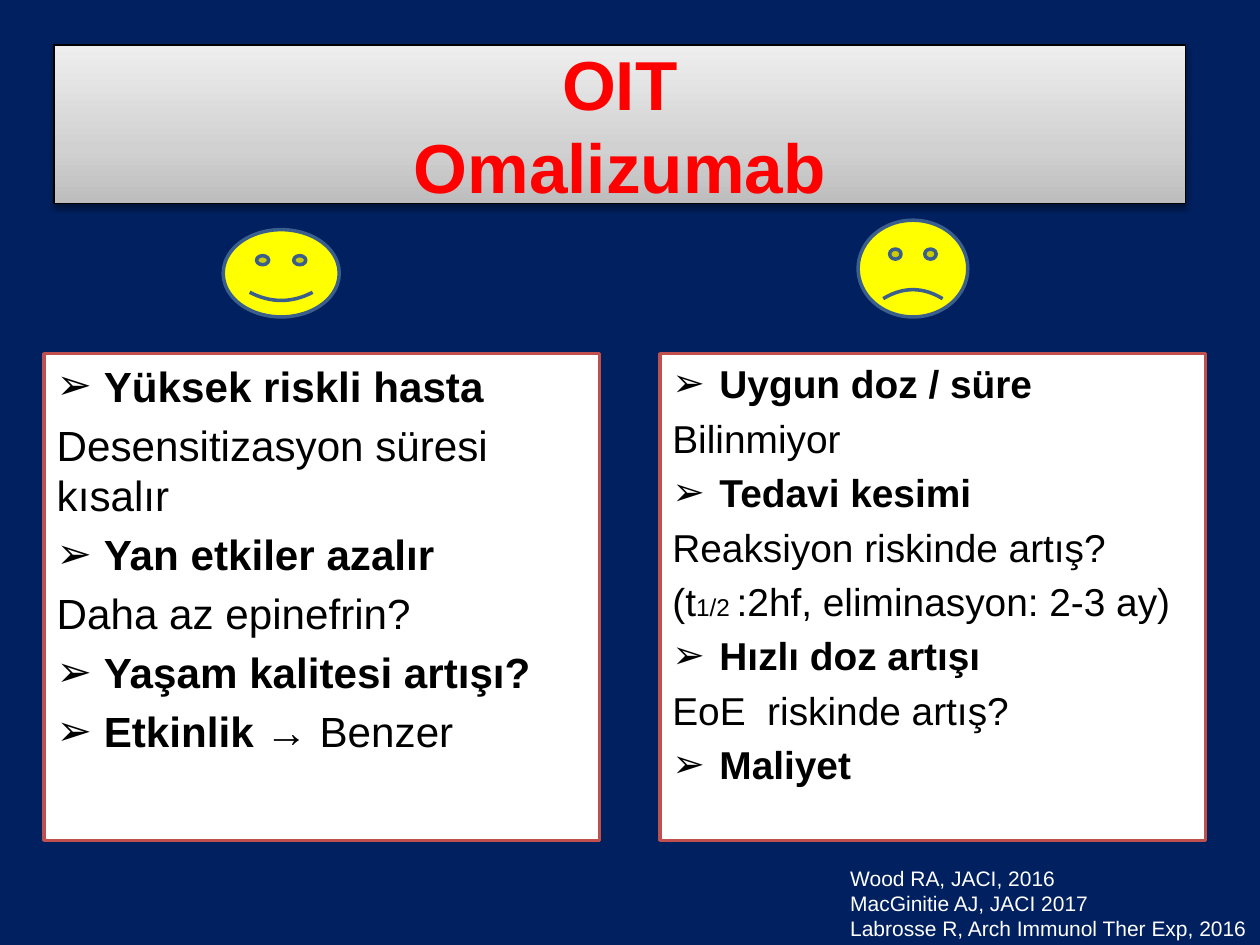
from copy import deepcopy

from pptx import Presentation
from pptx.dml.color import RGBColor
from pptx.enum.shapes import MSO_SHAPE
from pptx.enum.text import MSO_ANCHOR, MSO_AUTO_SIZE, PP_ALIGN
from pptx.oxml import parse_xml
from pptx.oxml.ns import nsdecls, qn
from pptx.util import Cm, Pt

COLORS = {
    "navy": "002060", "white": "FFFFFF", "black": "000000",
    "red": "FF0000", "border": "C0504D", "yellow": "FFFF00",
    "face_line": "3A5F8C",
}
TITLE_STOPS = [(0, "BDBDBD"), (0.35, "D1D1D1"), (1, "EEEEEE")]
INDENT = Cm(0.95)

# Each paragraph: (has bullet, [(text, bold, small), ...])
BENEFITS = [
    (True, [("Yüksek riskli hasta", True, False)]),
    (False, [("Desensitizasyon süresi kısalır", False, False)]),
    (True, [("Yan etkiler azalır", True, False)]),
    (False, [("Daha az epinefrin?", False, False)]),
    (True, [("Yaşam kalitesi artışı?", True, False)]),
    (True, [("Etkinlik → ", True, False), ("Benzer", False, False)]),
]
CONCERNS = [
    (True, [("Uygun doz / süre", True, False)]),
    (False, [("Bilinmiyor", False, False)]),
    (True, [("Tedavi kesimi", True, False)]),
    (False, [("Reaksiyon riskinde artış?", False, False)]),
    (False, [("(t", False, False), ("1/2 ", False, True),
             (":2hf, eliminasyon: 2-3 ay)", False, False)]),
    (True, [("Hızlı doz artışı", True, False)]),
    (False, [("EoE  riskinde artış?", False, False)]),
    (True, [("Maliyet", True, False)]),
]
REFERENCES = [
    "Wood RA, JACI, 2016",
    "MacGinitie AJ, JACI 2017",
    "Labrosse R, Arch Immunol Ther Exp, 2016",
]


def rgb(name):
    return RGBColor.from_string(COLORS[name])


def place(sp, left, top, width, height):
    box = {"left": left, "top": top, "width": width, "height": height}
    for name, value in box.items():
        setattr(sp, name, Cm(value))


def outline(sp, color, width):
    sp.line.color.rgb = rgb(color)
    sp.line.width = Pt(width)


def add_run(p, text, size, color, bold=False):
    r = p.add_run()
    r.text = text
    font = {"name": "Arial", "size": Pt(size), "bold": bold}
    for name, value in font.items():
        setattr(r.font, name, value)
    r.font.color.rgb = rgb(color)


def fill_title(sp):
    place(sp, 1.09, 0.91, 22.81, 3.2)

    # Three-stop grey gradient, light at the top
    sp.fill.gradient()
    sp.fill.gradient_angle = 90
    gs_list = sp.element.spPr.find(qn("a:gradFill")).find(qn("a:gsLst"))
    gs_list.append(deepcopy(gs_list[0]))
    for stop, (position, color) in zip(sp.fill.gradient_stops, TITLE_STOPS):
        stop.position = position
        stop.color.rgb = RGBColor.from_string(color)
    outline(sp, "black", 0.75)

    # Soft shadow below
    sp.shadow.inherit = False
    sp.element.spPr.find(qn("a:effectLst")).append(parse_xml(
        f'<a:outerShdw {nsdecls("a")} blurRad="40000" dist="20000" '
        'dir="5400000" rotWithShape="0"><a:srgbClr val="000000">'
        '<a:alpha val="38000"/></a:srgbClr></a:outerShdw>'))

    tf = sp.text_frame
    tf.auto_size = MSO_AUTO_SIZE.NONE
    tf.vertical_anchor = MSO_ANCHOR.MIDDLE
    p = tf.paragraphs[0]
    p.alignment = PP_ALIGN.CENTER
    add_run(p, "OIT", 39.6, "red", True)
    p.add_line_break()
    add_run(p, "Omalizumab", 39.6, "red", True)


def set_bullet(p, bulleted):
    pPr = p._p.get_or_add_pPr()
    pPr.set("marL", str(INDENT if bulleted else 0))
    pPr.set("indent", str(-INDENT if bulleted else 0))
    tag = 'buChar {} char="➢"' if bulleted else "buNone {}"
    pPr.append(parse_xml(f'<a:{tag.format(nsdecls("a"))}/>'))


def fill_list(sp, left, width, size, items):
    place(sp, left, 7.13, width, 9.81)
    sp.fill.solid()
    sp.fill.fore_color.rgb = rgb("white")
    outline(sp, "border", 2)
    tf = sp.text_frame
    tf.auto_size = MSO_AUTO_SIZE.NONE
    for i, (bulleted, runs) in enumerate(items):
        p = tf.add_paragraph() if i else tf.paragraphs[0]
        set_bullet(p, bulleted)
        for text, bold, small in runs:
            add_run(p, text, 13.9 if small else size, "black", bold)


def add_face(s, left, top, width, height, smile=None):
    sp = s.shapes.add_shape(MSO_SHAPE.SMILEY_FACE, Cm(left), Cm(top),
                            Cm(width), Cm(height))
    sp.shadow.inherit = False
    sp.fill.solid()
    sp.fill.fore_color.rgb = rgb("yellow")
    outline(sp, "face_line", 2)
    if smile is not None:
        sp.adjustments[0] = smile


def add_references(s):
    sp = s.shapes.add_textbox(Cm(16.89), Cm(17.32), Cm(8.51), Cm(1.8))
    tf = sp.text_frame
    tf.word_wrap = False
    tf.auto_size = MSO_AUTO_SIZE.SHAPE_TO_FIT_TEXT
    for i, text in enumerate(REFERENCES):
        p = tf.add_paragraph() if i else tf.paragraphs[0]
        add_run(p, text, 12, "white")


def main():
    prs = Presentation()
    prs.slide_width, prs.slide_height = Cm(25.4), Cm(19.05)
    s = prs.slides.add_slide(prs.slide_layouts[3])
    s.background.fill.solid()
    s.background.fill.fore_color.rgb = rgb("navy")

    # Title and the two lists
    fill_title(s.shapes.title)
    fill_list(s.placeholders[1], 0.89, 11.2, 24.1, BENEFITS)
    fill_list(s.placeholders[2], 13.3, 11, 22.2, CONCERNS)

    # Happy and sad faces above the lists
    add_face(s, 4.5, 4.63, 2.34, 1.76)
    add_face(s, 17.3, 4.44, 2.21, 1.95, smile=-0.05)

    add_references(s)
    prs.save("out.pptx")


if __name__ == "__main__":
    main()
